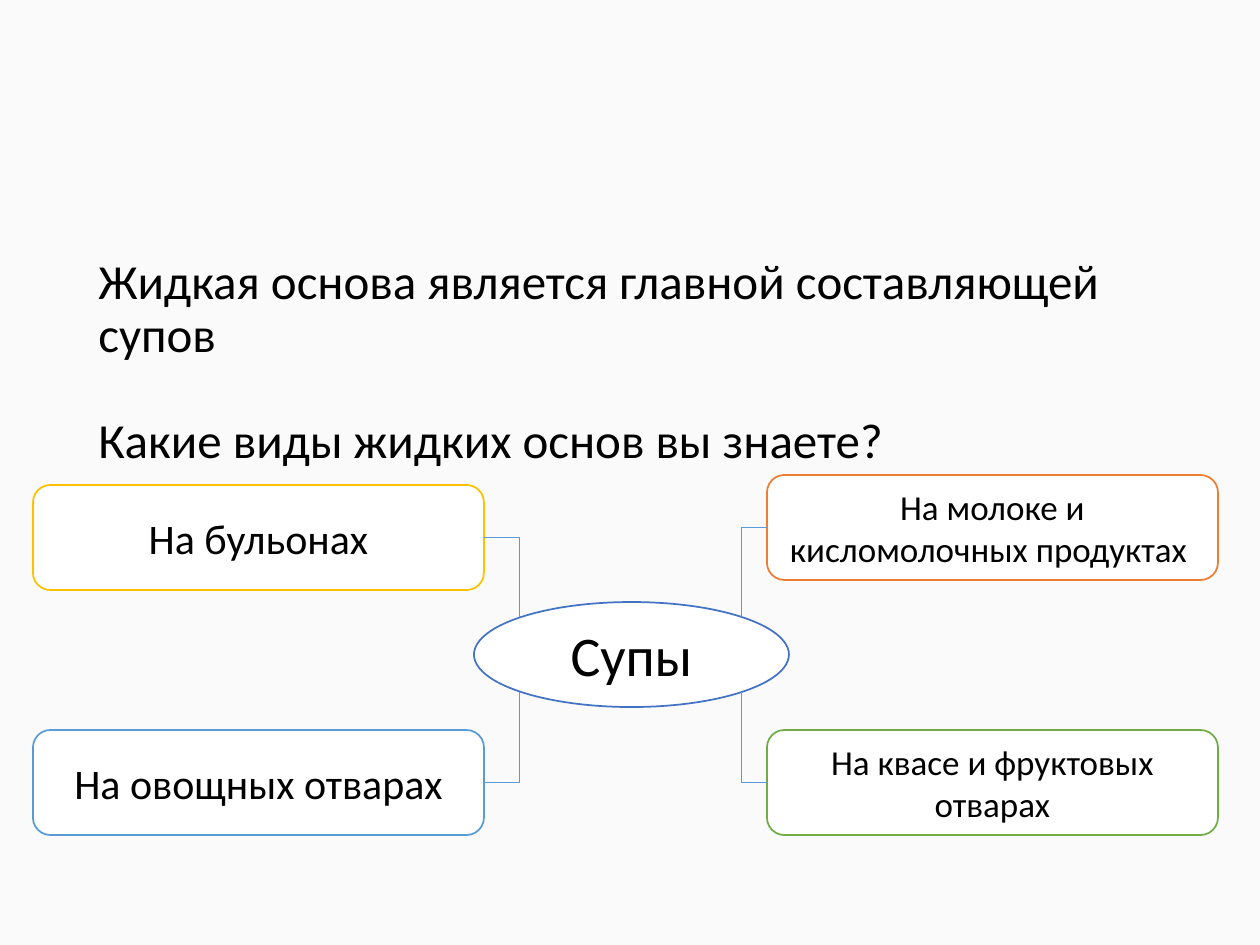
import pptx
import pptx.util
import pptx.dml.color
import pptx.enum.shapes
import pptx.enum.text
import pptx.oxml.ns
import lxml.etree

PX = 914400 / 126
SHAPE = pptx.enum.shapes.MSO_SHAPE
ANCHOR = pptx.enum.text.MSO_ANCHOR
ALIGN = pptx.enum.text.PP_ALIGN
qn = pptx.oxml.ns.qn


def rgb(color):
    return pptx.dml.color.RGBColor.from_string(color)


def write(shape, lines, size, align=ALIGN.CENTER, anchor=ANCHOR.MIDDLE,
          spacing=1.0, gap=0):
    frame = shape.text_frame
    frame.word_wrap = True
    frame.vertical_anchor = anchor
    for i, line in enumerate(lines):
        paragraph = frame.add_paragraph() if i else frame.paragraphs[0]
        paragraph.alignment = align
        paragraph.line_spacing = spacing
        if i:
            paragraph.space_before = pptx.util.Pt(gap)
        run = paragraph.add_run()
        run.text = line
        run.font.size = pptx.util.Pt(size)
        run.font.name = "Calibri"
        run.font.color.rgb = rgb("000000")


deck = pptx.Presentation()
deck.slide_width = round(1260 * PX)
deck.slide_height = round(945 * PX)
slide = deck.slides.add_slide(deck.slide_layouts[6])
slide.background.fill.solid()
slide.background.fill.fore_color.rgb = rgb("FAFAFA")

question = slide.shapes.add_textbox(
    *(round(v * PX) for v in (86, 246, 1086, 229)))
write(question,
      ["Жидкая основа является главной составляющей супов",
       "Какие виды жидких основ вы знаете?"],
      28, align=ALIGN.LEFT, anchor=ANCHOR.BOTTOM, spacing=0.9, gap=30)

# kind, left, top, width, outline, label, text size
BOX_W, NODE_H = 451, 105
LEFT, RIGHT = 33, 767
nodes = [
    (SHAPE.OVAL, 474, 602, 315, "4472C4", "Супы", 32),
    (SHAPE.ROUNDED_RECTANGLE, RIGHT, 475, BOX_W, "ED7D31",
     "На молоке и кисломолочных продуктах ", 20),
    (SHAPE.ROUNDED_RECTANGLE, RIGHT, 730, BOX_W, "70AD47",
     "На квасе и фруктовых отварах", 20),
    (SHAPE.ROUNDED_RECTANGLE, LEFT, 485, BOX_W, "FFC000", "На бульонах", 24),
    (SHAPE.ROUNDED_RECTANGLE, LEFT, 730, BOX_W, "5B9BD5",
     "На овощных отварах", 24),
]
drawn = []
for kind, left, top, width, outline, label, size in nodes:
    node = slide.shapes.add_shape(
        kind, *(round(v * PX) for v in (left, top, width, NODE_H)))
    node.shadow.inherit = False
    node.fill.solid()
    node.fill.fore_color.rgb = rgb("FFFFFF")
    node.line.color.rgb = rgb(outline)
    node.line.width = pptx.util.Pt(1)
    write(node, [label], size)
    drawn.append(node)

# box side, then the diagonal connection site of the oval and its position
soups, milk, kvass, broth, vegetable = drawn
links = [
    (broth, 3, 1, 519, 617),
    (milk, 1, 7, 742, 617),
    (vegetable, 3, 3, 519, 692),
    (kvass, 1, 5, 742, 692),
]
for base, side, site, x, y in links:
    link = slide.shapes.add_connector(
        pptx.enum.shapes.MSO_CONNECTOR.ELBOW, 0, 0, 0, 0)
    link.begin_connect(base, side)
    link.end_connect(soups, 0)
    link.end_x, link.end_y = round(x * PX), round(y * PX)
    link.line.color.rgb = rgb("5B9BD5")
    link.line.width = pptx.util.Pt(0.5)
    # One bend only, joined to a diagonal site of the oval
    link._element.find(".//" + qn("a:endCxn")).set("idx", str(site))
    properties = link._element.spPr
    properties.find(qn("a:prstGeom")).set("prst", "bentConnector2")
    lxml.etree.SubElement(properties, qn("a:effectLst"))

deck.save("out.pptx")
